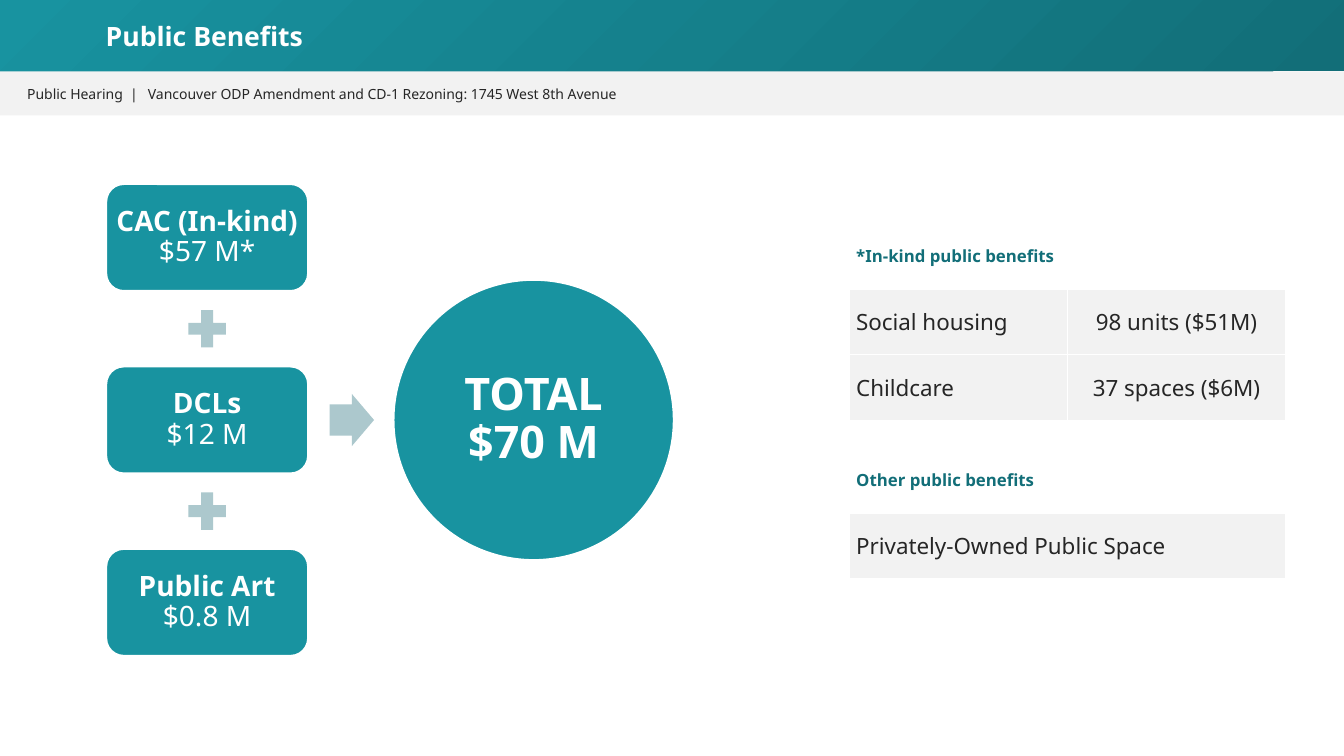
from lxml import etree
from pptx import Presentation
from pptx.dml.color import RGBColor
from pptx.enum import shapes, text
from pptx.oxml.ns import qn
from pptx.util import Pt

FONT = "Noto Sans"
COLOURS = {
    "teal": "1893A0", "dark_teal": "126E78", "pale_teal": "ACC8CD",
    "grey": "F2F2F2", "ink": "262626", "white": "FFFFFF",
}
TITLE = "Public Benefits"
MEETING = "Public Hearing  |"
SUBJECT = "Vancouver ODP Amendment and CD-1 Rezoning: 1745 West 8th Avenue"
CONTRIBUTIONS = [("CAC (In-kind)", "$57 M*"), ("DCLs", "$12 M"), ("Public Art", "$0.8 M")]
TOTAL = "TOTAL\v$70 M"
# top, heading, rows
BENEFIT_TABLES = [
    (159.8, "*In-kind public benefits",
     [("Social housing", "98 units ($51M)"), ("Childcare", "37 spaces ($6M)")]),
    (319.7, "Other public benefits", [("Privately-Owned Public Space",)]),
]

SLIDE_WIDTH, SLIDE_HEIGHT = 960, 540
TITLE_HEIGHT, BAR_HEIGHT = 51, 31.5
FLOW_MIDDLE = 300
BOX_LEFT, BOX_WIDTH, BOX_HEIGHT, BOX_PITCH = 75.6, 144.8, 77, 130.3
PLUS_SIZE = 36.4
ARROW_LEFT, ARROW_WIDTH, ARROW_HEIGHT = 235.4, 31.8, 37.4
CIRCLE_LEFT, CIRCLE_SIZE = 280.8, 200.8
TABLE_LEFT, TABLE_WIDTH, ROW_HEIGHT = 606.4, 312, 46.8

LEFT, CENTRE = text.PP_ALIGN.LEFT, text.PP_ALIGN.CENTER
TOP, MIDDLE = text.MSO_ANCHOR.TOP, text.MSO_ANCHOR.MIDDLE
SHAPE = shapes.MSO_SHAPE


def rgb(name):
    return RGBColor.from_string(COLOURS[name])


def add_shape(slide, kind, left, top, width, height, fill, outline=False):
    shape = slide.shapes.add_shape(kind, Pt(left), Pt(top), Pt(width), Pt(height))
    shape.shadow.inherit = False
    shape.fill.solid()
    shape.fill.fore_color.rgb = rgb(fill)
    if outline:
        shape.line.color.rgb = rgb("white")
        shape.line.width = Pt(2)
    else:
        shape.line.fill.background()
    return shape


def write(frame, words, size, colour, bold=False, align=LEFT, spacing=None):
    frame.text = words
    frame.word_wrap = True
    paragraph = frame.paragraphs[0]
    paragraph.alignment = align
    paragraph.line_spacing = spacing
    for run in paragraph.runs:
        run.font.name = FONT
        run.font.size = Pt(size)
        run.font.bold = bold
        run.font.color.rgb = rgb(colour)


def set_insets(frame, left, top, right, bottom, anchor):
    frame.margin_left, frame.margin_top = Pt(left), Pt(top)
    frame.margin_right, frame.margin_bottom = Pt(right), Pt(bottom)
    frame.vertical_anchor = anchor


def add_label(slide, left, top, width, height):
    return slide.shapes.add_textbox(Pt(left), Pt(top), Pt(width), Pt(height)).text_frame


def fill_from_corner(shape, start, end):
    """Fill with a circular gradient centred on the top left corner."""
    shape.fill.gradient()
    for stop, colour in zip(shape.fill.gradient_stops, (start, end)):
        stop.color.rgb = rgb(colour)
    gradient = shape._element.spPr.find(qn("a:gradFill"))
    gradient.remove(gradient.find(qn("a:lin")))
    circle = etree.SubElement(gradient, qn("a:path"), path="circle")
    etree.SubElement(circle, qn("a:fillToRect"), r="100000", b="100000")


def add_header(slide):
    band = add_shape(slide, SHAPE.RECTANGLE, 0, 0, SLIDE_WIDTH, TITLE_HEIGHT, "teal")
    fill_from_corner(band, "teal", "dark_teal")
    bar = add_shape(slide, SHAPE.RECTANGLE, 0, TITLE_HEIGHT, SLIDE_WIDTH, BAR_HEIGHT, "grey")
    set_insets(bar.text_frame, 19.4, 10, 7.2, 3.6, TOP)
    write(bar.text_frame, MEETING, 10, "ink")
    write(add_label(slide, 98.6, 57.6, 445, 19.4), SUBJECT, 10, "ink")
    title = add_label(slide, 47.5, 0, 214.6, TITLE_HEIGHT)
    set_insets(title, 28, 3.6, 7.2, 3.6, MIDDLE)
    write(title, TITLE, 19, "white", bold=True)


def add_flow(slide):
    """Draw the contributions with plus signs between them, and the total."""
    box_centre = BOX_LEFT + BOX_WIDTH / 2
    for index, (name, amount) in enumerate(CONTRIBUTIONS):
        middle = FLOW_MIDDLE + (index - (len(CONTRIBUTIONS) - 1) / 2) * BOX_PITCH
        box = add_shape(slide, SHAPE.ROUNDED_RECTANGLE, BOX_LEFT, middle - BOX_HEIGHT / 2,
                        BOX_WIDTH, BOX_HEIGHT, "teal", outline=True)
        set_insets(box.text_frame, 2, 2, 2, 2, MIDDLE)
        write(box.text_frame, f"{name}\v{amount}", 20, "white", True, CENTRE, 0.9)
        box.text_frame.paragraphs[0].runs[1].font.bold = False
        if index < len(CONTRIBUTIONS) - 1:
            add_shape(slide, SHAPE.MATH_PLUS, box_centre - PLUS_SIZE / 2,
                      middle + BOX_PITCH / 2 - PLUS_SIZE / 2, PLUS_SIZE, PLUS_SIZE, "pale_teal")
    arrow = add_shape(slide, SHAPE.RIGHT_ARROW, ARROW_LEFT, FLOW_MIDDLE - ARROW_HEIGHT / 2,
                      ARROW_WIDTH, ARROW_HEIGHT, "pale_teal")
    arrow.adjustments[0] = 0.6
    circle = add_shape(slide, SHAPE.OVAL, CIRCLE_LEFT, FLOW_MIDDLE - CIRCLE_SIZE / 2,
                       CIRCLE_SIZE, CIRCLE_SIZE, "teal", outline=True)
    set_insets(circle.text_frame, 3, 3, 3, 3, MIDDLE)
    write(circle.text_frame, TOTAL, 32, "white", True, CENTRE, 0.9)


def add_borders(cell):
    for side in ("a:lnL", "a:lnR", "a:lnT", "a:lnB"):
        line = etree.SubElement(cell._tc.get_or_add_tcPr(), qn(side), w=str(Pt(1)))
        fill = etree.SubElement(line, qn("a:solidFill"))
        etree.SubElement(fill, qn("a:srgbClr"), val=COLOURS["white"])


def add_benefit_table(slide, top, heading, rows):
    column_count = len(rows[0])
    table = slide.shapes.add_table(
        len(rows) + 1, column_count, Pt(TABLE_LEFT), Pt(top),
        Pt(TABLE_WIDTH), Pt(ROW_HEIGHT * (len(rows) + 1))).table
    table.first_row = table.horz_banding = False
    for cell in table.iter_cells():
        set_insets(cell, 5.2, 2.4, 5.2, 2.4, MIDDLE)
        add_borders(cell)
        cell.fill.background()
    if column_count > 1:
        table.cell(0, 0).merge(table.cell(0, column_count - 1))
    write(table.cell(0, 0).text_frame, heading, 12, "dark_teal", bold=True)
    for row, values in enumerate(rows, 1):
        for column, value in enumerate(values):
            cell = table.cell(row, column)
            cell.fill.solid()
            cell.fill.fore_color.rgb = rgb("grey")
            write(cell.text_frame, value, 16, "ink", align=CENTRE if column else LEFT)


def main():
    presentation = Presentation()
    presentation.slide_width, presentation.slide_height = Pt(SLIDE_WIDTH), Pt(SLIDE_HEIGHT)
    slide = presentation.slides.add_slide(presentation.slide_layouts[6])
    add_header(slide)
    add_flow(slide)
    for top, heading, rows in BENEFIT_TABLES:
        add_benefit_table(slide, top, heading, rows)
    presentation.save("out.pptx")


if __name__ == "__main__":
    main()
